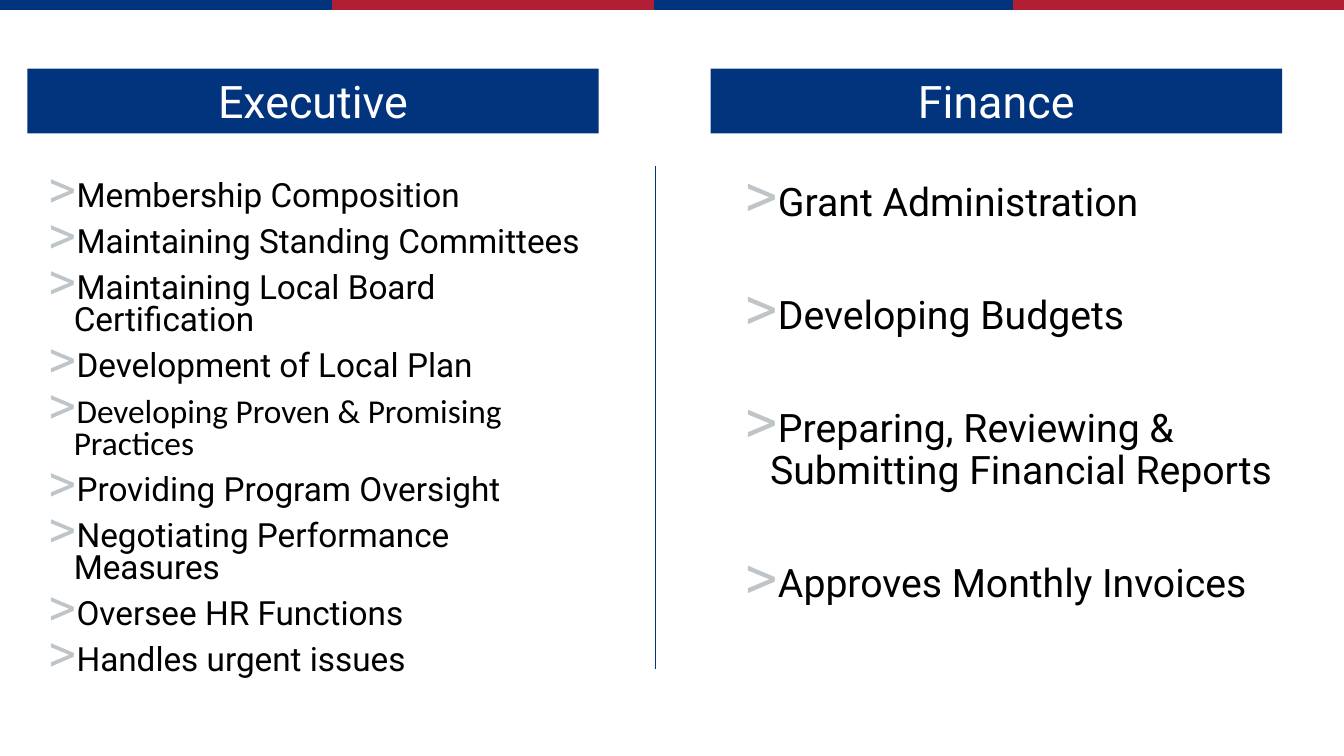
from dataclasses import dataclass

from lxml import etree
from pptx import Presentation
from pptx import util as u
from pptx.dml.color import RGBColor
from pptx.enum import shapes, text
from pptx.oxml.ns import qn
from pptx.slide import Slide


@dataclass(frozen=True)
class Theme:
    navy: str = "02347E"
    red: str = "B01F33"
    bullet: str = "BEC4C7"
    ink: str = "000000"
    paper: str = "FFFFFF"
    font: str = "Roboto"
    alternate_font: str = "Calibri"
    heading_size: float = 32
    executive_size: float = 23.8
    finance_size: float = 28
    stripe_width: float = 8
    divider_width: float = 0.5


@dataclass(frozen=True)
class Rule:
    start: tuple[float, float]
    end: tuple[float, float]
    color: str
    width: float


@dataclass(frozen=True)
class Item:
    wording: str
    font: str


@dataclass(frozen=True)
class Committee:
    name: str
    banner_left: float
    list_left: float
    size: float
    line_spacing: float
    gap: float
    items: list[Item]


THEME = Theme()
PAGE_WIDTH, PAGE_HEIGHT = 33.87, 19.05
COLUMN_WIDTH = 14.4
BANNER_TOP, BANNER_HEIGHT = 1.73, 1.63
LIST_TOP, LIST_HEIGHT = 4.47, 12.09
LIST_INDENT = 0.64
STRIPE_Y = 0.1

STRIPES = [
    Rule((left, STRIPE_Y), (right, STRIPE_Y), color, THEME.stripe_width)
    for left, right, color in [
        (0, 8.79, THEME.navy),
        (8.36, 16.48, THEME.red),
        (16.48, 26.14, THEME.navy),
        (25.53, PAGE_WIDTH, THEME.red),
    ]
]
DIVIDER = Rule((16.51, 4.19), (16.51, 16.87), THEME.navy, THEME.divider_width)

COMMITTEES = [
    Committee("Executive", 0.69, 0.97, THEME.executive_size, 0.8, 10, [
        Item("Membership Composition", THEME.font),
        Item("Maintaining Standing Committees", THEME.font),
        Item("Maintaining Local Board Certification", THEME.font),
        Item("Development of Local Plan", THEME.font),
        Item("Developing Proven & Promising Practices", THEME.alternate_font),
        Item("Providing Program Oversight", THEME.font),
        Item("Negotiating Performance Measures", THEME.font),
        Item("Oversee HR Functions", THEME.font),
        Item("Handles urgent issues", THEME.font),
    ]),
    Committee("Finance", 17.91, 18.52, THEME.finance_size, 0.9, 50.5, [
        Item("Grant Administration", THEME.font),
        Item("Developing Budgets", THEME.font),
        Item("Preparing, Reviewing & Submitting Financial Reports", THEME.font),
        Item("Approves Monthly Invoices", THEME.font),
    ]),
]


def draw_rule(page: Slide, rule: Rule) -> None:
    line = page.shapes.add_connector(
        shapes.MSO_CONNECTOR.STRAIGHT,
        *(u.Cm(value) for value in rule.start + rule.end),
    )
    line.line.color.rgb = RGBColor.from_string(rule.color)
    line.line.width = u.Pt(rule.width)
    etree.SubElement(line._element.spPr, qn("a:effectLst"))


def add_span(para, wording: str, font: str, size: float, color: str) -> None:
    span = para.add_run()
    span.text = wording
    span.font.name = font
    span.font.size = u.Pt(size)
    span.font.color.rgb = RGBColor.from_string(color)


def add_bullet(para) -> None:
    properties = para._p.get_or_add_pPr()
    properties.set("marL", str(u.Cm(LIST_INDENT)))
    properties.set("indent", str(-u.Cm(LIST_INDENT)))
    color = etree.SubElement(properties, qn("a:buClr"))
    etree.SubElement(color, qn("a:srgbClr"), val=THEME.bullet)
    etree.SubElement(properties, qn("a:buSzPct"), val="145000")
    etree.SubElement(properties, qn("a:buChar"), char=">")


def draw_banner(page: Slide, committee: Committee) -> None:
    banner = page.shapes.add_shape(
        shapes.MSO_SHAPE.RECTANGLE,
        u.Cm(committee.banner_left), u.Cm(BANNER_TOP),
        u.Cm(COLUMN_WIDTH), u.Cm(BANNER_HEIGHT),
    )
    banner.shadow.inherit = False
    banner.fill.solid()
    banner.fill.fore_color.rgb = RGBColor.from_string(THEME.navy)
    banner.line.fill.background()
    frame = banner.text_frame
    frame.word_wrap = True
    frame.auto_size = text.MSO_AUTO_SIZE.SHAPE_TO_FIT_TEXT
    frame.vertical_anchor = text.MSO_ANCHOR.TOP
    para = frame.paragraphs[0]
    para.alignment = text.PP_ALIGN.CENTER
    add_span(para, committee.name, THEME.font, THEME.heading_size, THEME.paper)


def draw_list(page: Slide, committee: Committee) -> None:
    box = page.shapes.add_textbox(
        u.Cm(committee.list_left), u.Cm(LIST_TOP),
        u.Cm(COLUMN_WIDTH), u.Cm(LIST_HEIGHT),
    )
    frame = box.text_frame
    frame.word_wrap = True
    for index, item in enumerate(committee.items):
        para = frame.add_paragraph() if index else frame.paragraphs[0]
        add_bullet(para)
        para.line_spacing = committee.line_spacing
        if index:
            para.space_before = u.Pt(committee.gap)
        add_span(para, item.wording, item.font, committee.size, THEME.ink)


def main() -> None:
    deck = Presentation()
    deck.slide_width = u.Cm(PAGE_WIDTH)
    deck.slide_height = u.Cm(PAGE_HEIGHT)
    page = deck.slides.add_slide(deck.slide_layouts[6])
    for rule in [*STRIPES, DIVIDER]:
        draw_rule(page, rule)
    for committee in COMMITTEES:
        draw_banner(page, committee)
        draw_list(page, committee)
    deck.save("out.pptx")


if __name__ == "__main__":
    main()
